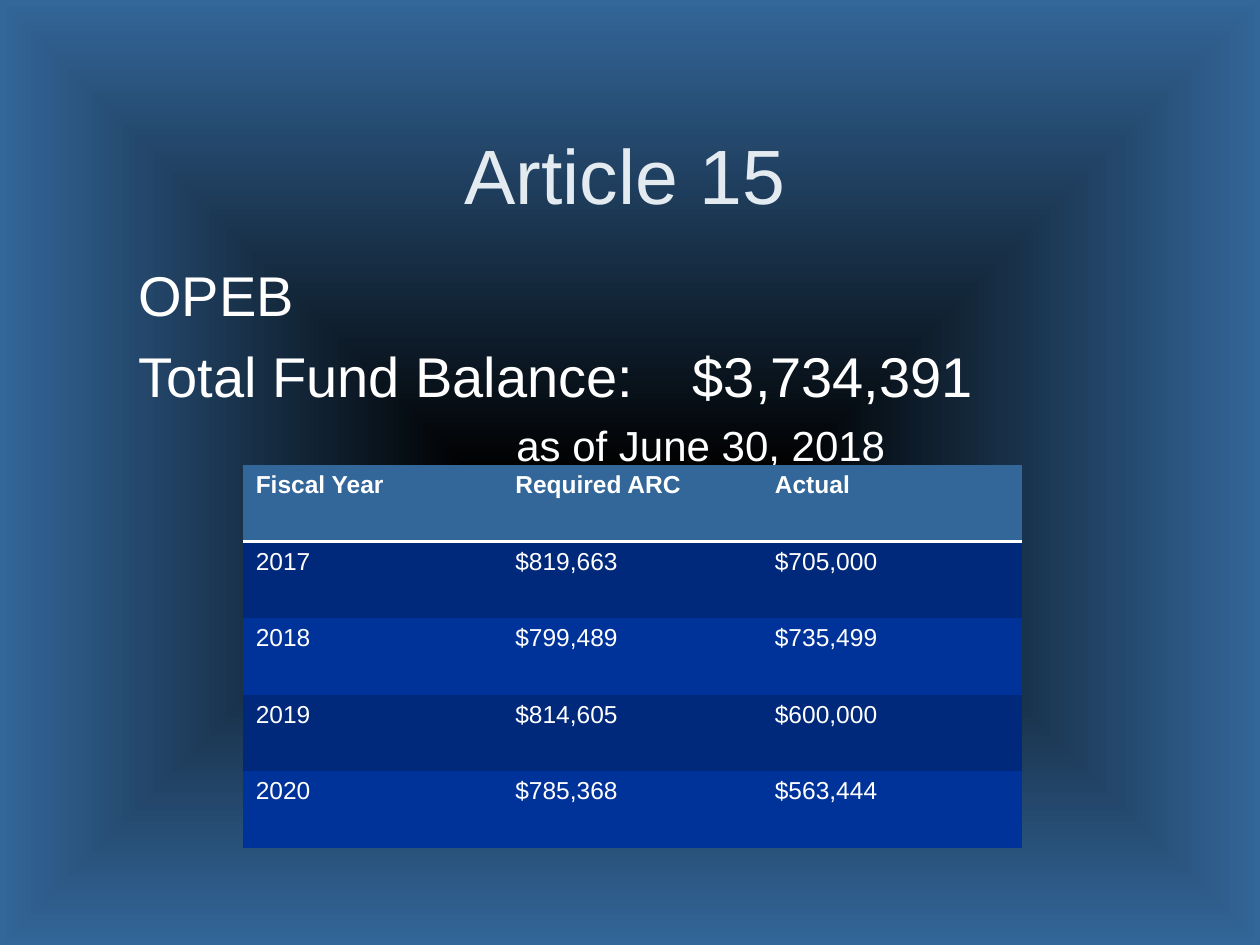
from lxml.etree import SubElement
from pptx import Presentation
from pptx.dml.color import RGBColor
from pptx.enum.text import MSO_ANCHOR, PP_ALIGN
from pptx.oxml import parse_xml
from pptx.oxml.ns import nsdecls, qn
from pptx.util import Inches, Pt

NO_GRID = "{2D5ABB26-0587-4C30-8999-92F81FD0307C}"


def tint(code):
    return RGBColor.from_string(code)


def assign(item, values):
    for name, value in values.items():
        setattr(item, name, value)


class Deck:
    font = "Arial"
    white = "FFFFFF"
    steel = "336699"
    bands = ("00297B", "003399")

    def __init__(self, show):
        self.slide = show.slides.add_slide(show.slide_layouts[6])

    def backdrop(self, inner, outer):
        fill = self.slide.background.fill
        fill.gradient()
        for stop, code, place in zip(fill.gradient_stops, (inner, outer), (0, 1)):
            stop.color.rgb = tint(code)
            stop.position = place
        grad = next(self.slide._element.iter(qn("a:gradFill")))
        grad.remove(grad.find(qn("a:lin")))
        route = SubElement(grad, qn("a:path"), path="shape")
        SubElement(route, qn("a:fillToRect"), dict.fromkeys("ltrb", "50000"))

    def letter(self, para, text, size, code, bold=False):
        para.text = text
        assign(para.font, {"name": self.font, "size": Pt(size), "bold": bold})
        para.font.color.rgb = tint(code)

    def frame(self, box, anchor):
        shape = self.slide.shapes.add_textbox(*map(Inches, box))
        assign(shape.text_frame, {"word_wrap": True, "vertical_anchor": anchor})
        return shape.text_frame

    def title(self, text, box):
        para = self.frame(box, MSO_ANCHOR.MIDDLE).paragraphs[0]
        para.alignment = PP_ALIGN.CENTER
        self.letter(para, text, 44, "E3EBF1")

    def body(self, lines, box):
        frame = self.frame(box, MSO_ANCHOR.TOP)
        for place, (text, size, gap, indent, stop) in enumerate(lines):
            para = frame.add_paragraph() if place else frame.paragraphs[0]
            if gap:
                para.space_before = Pt(gap)
            props = para._p.get_or_add_pPr()
            props.set("marL", str(Inches(indent)))
            if stop:
                tabs = SubElement(props, qn("a:tabLst"))
                SubElement(tabs, qn("a:tab"), pos=str(Inches(stop)), algn="l")
            self.letter(para, text, size, self.white)

    def rule(self, cell):
        line = parse_xml(
            f'<a:lnB {nsdecls("a")} w="{Pt(2)}"><a:solidFill>'
            f'<a:srgbClr val="{self.white}"/></a:solidFill></a:lnB>'
        )
        cell._tc.get_or_add_tcPr().insert(0, line)

    def table(self, rows, box):
        shape = self.slide.shapes.add_table(len(rows), len(rows[0]), *map(Inches, box))
        table = shape.table
        assign(table, {"first_row": False, "horz_banding": False})
        table._tbl.tblPr.find(qn("a:tableStyleId")).text = NO_GRID
        for r, row in enumerate(rows):
            for c, text in enumerate(row):
                cell = table.cell(r, c)
                cell.fill.solid()
                code = self.bands[(r - 1) % 2] if r else self.steel
                cell.fill.fore_color.rgb = tint(code)
                self.letter(cell.text_frame.paragraphs[0], text, 14, self.white, r == 0)
                if r == 0:
                    self.rule(cell)


def main():
    show = Presentation()
    assign(show, {"slide_width": Inches(10), "slide_height": Inches(7.5)})
    deck = Deck(show)
    deck.backdrop("000000", deck.steel)
    deck.title("Article 15", (1, 0.92, 7.92, 0.92))
    deck.body(
        [
            ("OPEB", 32, 0, 0, 0),
            ("Total Fund Balance:\t$3,734,391", 32, 7.5, 0, 4.4),
            ("as of June 30, 2018", 24, 6.5, 3, 0),
        ],
        (1, 2.02, 8, 4.65),
    )
    deck.table(
        [
            ("Fiscal Year", "Required ARC", "Actual"),
            ("2017", "$819,663", "$705,000"),
            ("2018", "$799,489", "$735,499"),
            ("2019", "$814,605", "$600,000"),
            ("2020", "$785,368", "$563,444"),
        ],
        (1.93, 3.69, 6.18, 3.04),
    )
    show.save("out.pptx")


if __name__ == "__main__":
    main()
